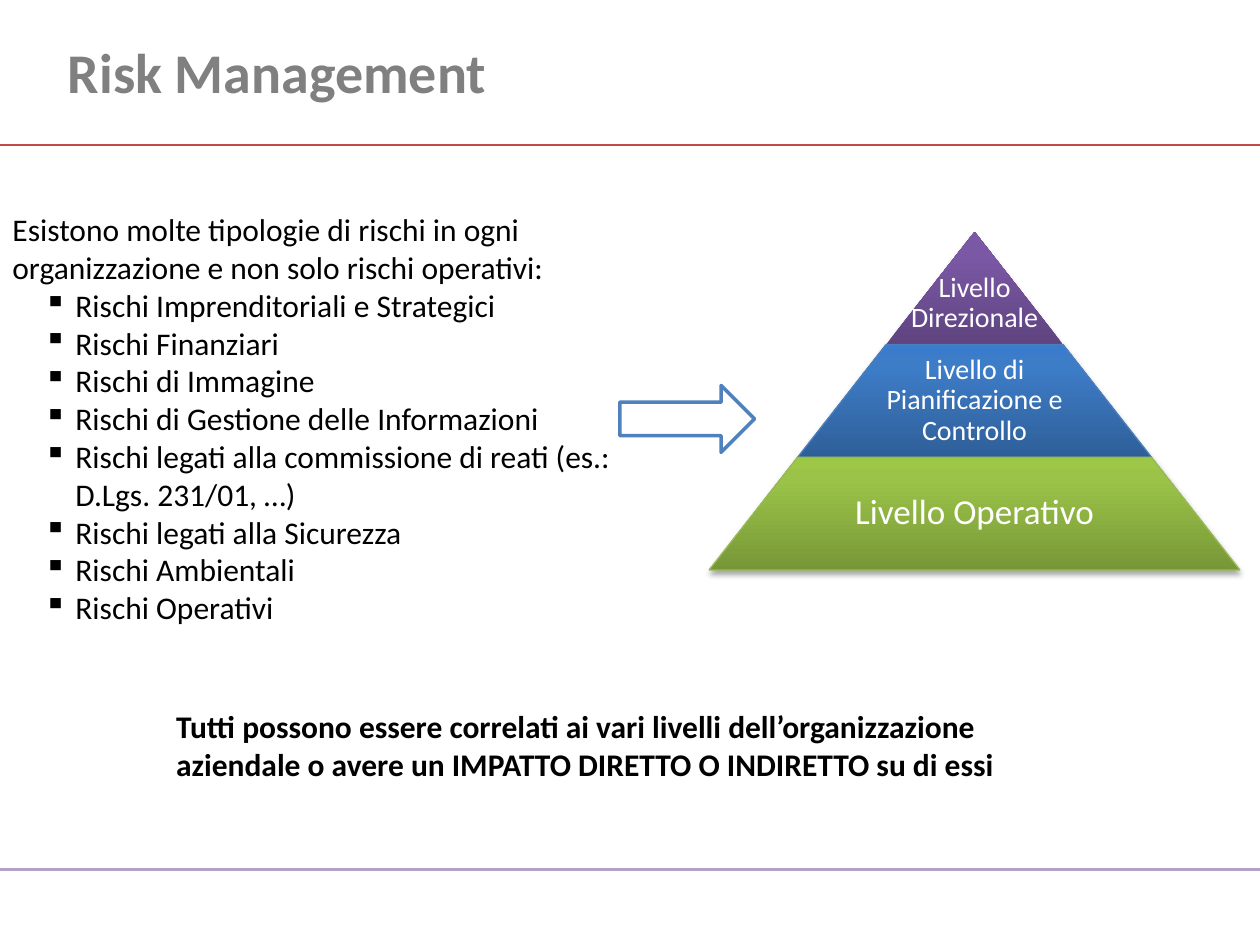
from lxml import etree
from pptx import Presentation
from pptx.dml.color import RGBColor
from pptx.enum.shapes import MSO_CONNECTOR, MSO_SHAPE
from pptx.enum.text import MSO_ANCHOR, PP_ALIGN
from pptx.oxml import parse_xml
from pptx.oxml.ns import nsdecls, qn
from pptx.util import Pt

TRAPEZOID, RIGHT_ARROW = MSO_SHAPE.TRAPEZOID, MSO_SHAPE.RIGHT_ARROW
STRAIGHT = MSO_CONNECTOR.STRAIGHT
TOP, MIDDLE = MSO_ANCHOR.TOP, MSO_ANCHOR.MIDDLE
LEFT, CENTER = PP_ALIGN.LEFT, PP_ALIGN.CENTER

THEME = {
    "font": "Calibri",
    "title": "808080", "text": "000000", "light": "FFFFFF",
    "top_rule": "BF4C48", "bottom_rule": "B3A2C7", "arrow": "4F81BD",
    "title_size": 32, "body_size": 18, "tier_size": 16, "base_size": 20,
}

TITLE = "Risk Management"
INTRO = ("Esistono molte tipologie di rischi in ogni organizzazione "
         "e non solo rischi operativi:")
RISKS = [
    "Rischi Imprenditoriali e Strategici",
    "Rischi Finanziari",
    "Rischi di Immagine",
    "Rischi di Gestione delle Informazioni",
    "Rischi legati alla commissione di reati (es.: D.Lgs. 231/01, …)",
    "Rischi legati alla Sicurezza",
    "Rischi Ambientali",
    "Rischi Operativi",
]
CONCLUSION = ("Tutti possono essere correlati ai vari livelli dell’organizzazione "
              "aziendale o avere un IMPATTO DIRETTO O INDIRETTO su di essi")

# Paragraphs, size, gradient from bottom to top, outline, text width share, top inset
TIERS = [
    (["Livello", "Direzionale"], THEME["tier_size"],
     ("5F4480", "7B58A6", "7C57A8"), None, 1, 18.7),
    (["Livello di Pianificazione e Controllo"], THEME["tier_size"],
     ("2F5F99", "3D7CC7", "3A7CCB"), "4B7EBC", 0.65, 1.4),
    (["Livello Operativo"], THEME["base_size"],
     ("779737", "9BC348", "9DC746"), "98B955", 0.65, 1.4),
]
GRADIENT_STOPS = (0, 80, 100)
APEX_X, APEX_Y = 556.9, 132.5
TIER_H, TIER_STEP = 64.4, 101.1


def rgb(color):
    return RGBColor.from_string(color)


def add_text(slide, box, paragraphs, size, color=THEME["text"], bold=False,
             align=LEFT, anchor=TOP, insets=(7.2, 3.6, 7.2, 3.6),
             spacing=None, indent=0, bullets_from=None):
    """Add a text box; paragraphs from index bullets_from on get a square bullet."""
    tf = slide.shapes.add_textbox(*map(Pt, box)).text_frame
    tf.word_wrap = True
    tf.vertical_anchor = anchor
    tf.margin_left, tf.margin_top, tf.margin_right, tf.margin_bottom = map(Pt, insets)
    for i, text in enumerate(paragraphs):
        p = tf.paragraphs[0] if i == 0 else tf.add_paragraph()
        p.alignment = align
        p.line_spacing = spacing
        pPr = p._p.get_or_add_pPr()
        if bullets_from is not None and i >= bullets_from:
            pPr.set("marL", str(Pt(36)))
            pPr.set("indent", str(Pt(-18)))
            etree.SubElement(pPr, qn("a:buChar"), char="▪")
        elif indent:
            pPr.set("marL", str(Pt(indent)))
        r = p.add_run()
        r.text = text
        r.font.name = THEME["font"]
        r.font.size = Pt(size)
        r.font.bold = bold
        r.font.color.rgb = rgb(color)


def add_rule(slide, y, color, width):
    line = slide.shapes.add_connector(STRAIGHT, 0, Pt(y), Pt(720), Pt(y))
    line.line.color.rgb = rgb(color)
    line.line.width = Pt(width)
    etree.SubElement(line._element.spPr, qn("a:effectLst"))


def add_tier(slide, index, paragraphs, size, gradient, outline, share, top_inset):
    width = TIER_STEP * (index + 1)
    top = APEX_Y + TIER_H * index
    s = slide.shapes.add_shape(TRAPEZOID, Pt(APEX_X - width / 2), Pt(top),
                               Pt(width), Pt(TIER_H))
    s.adjustments[0] = TIER_STEP / 2 / TIER_H
    if outline:
        s.line.color.rgb = rgb(outline)
        s.line.width = Pt(0.75)
    else:
        s.line.fill.background()
    stops = "".join(f'<a:gs pos="{pos * 1000}"><a:srgbClr val="{color}"/></a:gs>'
                    for pos, color in zip(GRADIENT_STOPS, gradient))
    spPr = s._element.spPr
    spPr.find(qn("a:prstGeom")).addnext(parse_xml(
        f'<a:gradFill {nsdecls("a")} rotWithShape="1"><a:gsLst>{stops}</a:gsLst>'
        '<a:lin ang="16200000" scaled="0"/></a:gradFill>'))
    spPr.append(parse_xml(
        f'<a:effectLst {nsdecls("a")}><a:outerShdw blurRad="{Pt(3.1)}" '
        f'dist="{Pt(1.8)}" dir="5400000" rotWithShape="0"><a:srgbClr val="000000">'
        '<a:alpha val="35000"/></a:srgbClr></a:outerShdw></a:effectLst>'))
    text_w = width * share
    add_text(slide, (APEX_X - text_w / 2, top, text_w, TIER_H), paragraphs, size,
             color=THEME["light"], align=CENTER, anchor=MIDDLE, spacing=0.9,
             insets=(1.4, top_inset, 1.4, 1.4))


def add_arrow(slide, box):
    s = slide.shapes.add_shape(RIGHT_ARROW, *map(Pt, box))
    s.shadow.inherit = False
    s.fill.solid()
    s.fill.fore_color.rgb = rgb(THEME["light"])
    s.line.color.rgb = rgb(THEME["arrow"])
    s.line.width = Pt(2)


def main():
    prs = Presentation()
    prs.slide_width, prs.slide_height = Pt(720), Pt(540)
    slide = prs.slides.add_slide(prs.slide_layouts[6])

    add_rule(slide, 82.8, THEME["top_rule"], 0.75)
    add_rule(slide, 496.8, THEME["bottom_rule"], 1.75)
    add_text(slide, (2.9, 9.4, 409.7, 62.6), [TITLE], THEME["title_size"],
             color=THEME["title"], bold=True, anchor=MIDDLE, indent=28.8)
    for index, tier in enumerate(TIERS):
        add_tier(slide, index, *tier)
    add_text(slide, (0, 116.6, 368.6, 247), [INTRO, *RISKS], THEME["body_size"],
             bullets_from=1)
    add_text(slide, (93.6, 400.3, 532.8, 51.1), [CONCLUSION], THEME["body_size"],
             bold=True)
    add_arrow(slide, (354.2, 220.3, 77, 38.2))

    prs.save("out.pptx")


if __name__ == "__main__":
    main()
